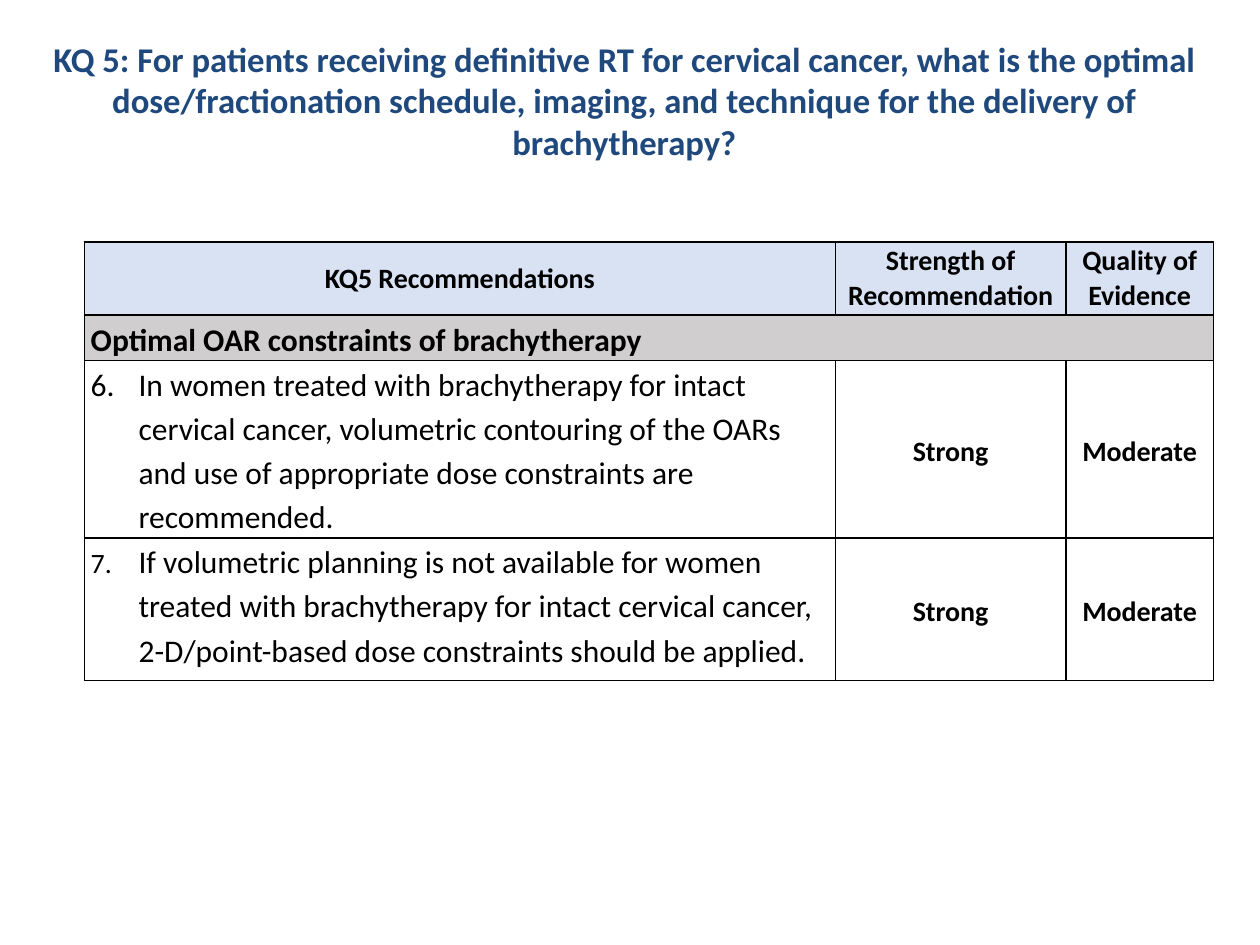
from lxml.etree import SubElement
from pptx import Presentation
from pptx.dml.color import RGBColor
from pptx.enum.text import MSO_ANCHOR, PP_ALIGN
from pptx.oxml.ns import qn
from pptx.util import Inches, Pt

TITLE = ("KQ 5: For patients receiving definitive RT for cervical cancer, what is the optimal "
         "dose/fractionation schedule, imaging, and technique for the delivery of brachytherapy?")
HEADERS = ["KQ5 Recommendations", "Strength of Recommendation", "Quality of Evidence"]
SECTION = "Optimal OAR constraints of brachytherapy"
RECOMMENDATIONS = [
    ("6.", 18, "In women treated with brachytherapy for intact cervical cancer, volumetric contouring "
     "of the OARs and use of appropriate dose constraints are recommended.", "Strong", "Moderate"),
    ("7.", 16, "If volumetric planning is not available for women treated with brachytherapy for intact "
     "cervical cancer, 2-D/point-based dose constraints should be applied.", "Strong", "Moderate"),
]
COLUMN_WIDTHS = [5.96, 1.83, 1.17]
ROW_HEIGHTS = [0.58, 0.36, 1.41, 1.13]
HANGING_INDENT = 0.38


def color(hex_string):
    return RGBColor.from_string(hex_string)


def format_run(run, size, bold=True, hex_string="000000"):
    run.font.name = "Calibri"
    run.font.size = Pt(size)
    run.font.bold = bold
    run.font.color.rgb = color(hex_string)


def add_borders(cell):
    properties = cell._tc.get_or_add_tcPr()
    for position, side in enumerate(("a:lnL", "a:lnR", "a:lnT", "a:lnB")):
        line = SubElement(properties, qn(side), w=str(Pt(1)))
        fill = SubElement(line, qn("a:solidFill"))
        SubElement(fill, qn("a:srgbClr"), val="000000")
        properties.insert(position, line)


def style_cell(cell, fill):
    cell.fill.solid()
    cell.fill.fore_color.rgb = color(fill)
    cell.margin_left = cell.margin_right = Inches(0.05)
    cell.margin_top = cell.margin_bottom = 0
    cell.vertical_anchor = MSO_ANCHOR.MIDDLE
    add_borders(cell)


def write_cell(cell, text, size=16, align=PP_ALIGN.CENTER, spacing=1.15):
    paragraph = cell.text_frame.paragraphs[0]
    paragraph.text = text
    paragraph.alignment = align
    paragraph.line_spacing = spacing
    format_run(paragraph.runs[0], size)


def write_recommendation(cell, number, number_size, text):
    """Write a numbered paragraph whose lines hang after the number."""
    cell.vertical_anchor = MSO_ANCHOR.TOP
    paragraph = cell.text_frame.paragraphs[0]
    paragraph.line_spacing = 1.15
    properties = paragraph._p.get_or_add_pPr()
    properties.set("marL", str(Inches(HANGING_INDENT)))
    properties.set("indent", str(-Inches(HANGING_INDENT)))
    for part, size in ((number + "\t", number_size), (text, 18)):
        run = paragraph.add_run()
        run.text = part
        format_run(run, size, bold=False)


presentation = Presentation()
presentation.slide_width, presentation.slide_height = Inches(10), Inches(7.5)
slide = presentation.slides.add_slide(presentation.slide_layouts[6])

title = slide.shapes.add_textbox(Inches(0.29), Inches(0.25), Inches(9.33), Inches(1.5))
title.text_frame.word_wrap = True
title.text_frame.text = TITLE
title_paragraph = title.text_frame.paragraphs[0]
title_paragraph.alignment = PP_ALIGN.CENTER
format_run(title_paragraph.runs[0], 19.8, hex_string="1F497D")

table = slide.shapes.add_table(
    len(ROW_HEIGHTS), len(COLUMN_WIDTHS), Inches(0.67), Inches(1.92),
    Inches(sum(COLUMN_WIDTHS)), Inches(sum(ROW_HEIGHTS))).table
for column, width in zip(table.columns, COLUMN_WIDTHS):
    column.width = Inches(width)
for row, height, fill in zip(table.rows, ROW_HEIGHTS, ["D9E2F3", "D0CECE", "FFFFFF", "FFFFFF"]):
    row.height = Inches(height)
    for cell in row.cells:
        style_cell(cell, fill)

for column_index, header in enumerate(HEADERS):
    write_cell(table.cell(0, column_index), header, spacing=1.0)
table.cell(1, 0).merge(table.cell(1, len(HEADERS) - 1))
write_cell(table.cell(1, 0), SECTION, size=18, align=PP_ALIGN.LEFT)
for row_index, (number, number_size, text, *ratings) in enumerate(RECOMMENDATIONS, start=2):
    write_recommendation(table.cell(row_index, 0), number, number_size, text)
    for column_index, rating in enumerate(ratings, start=1):
        write_cell(table.cell(row_index, column_index), rating)

presentation.save("out.pptx")
